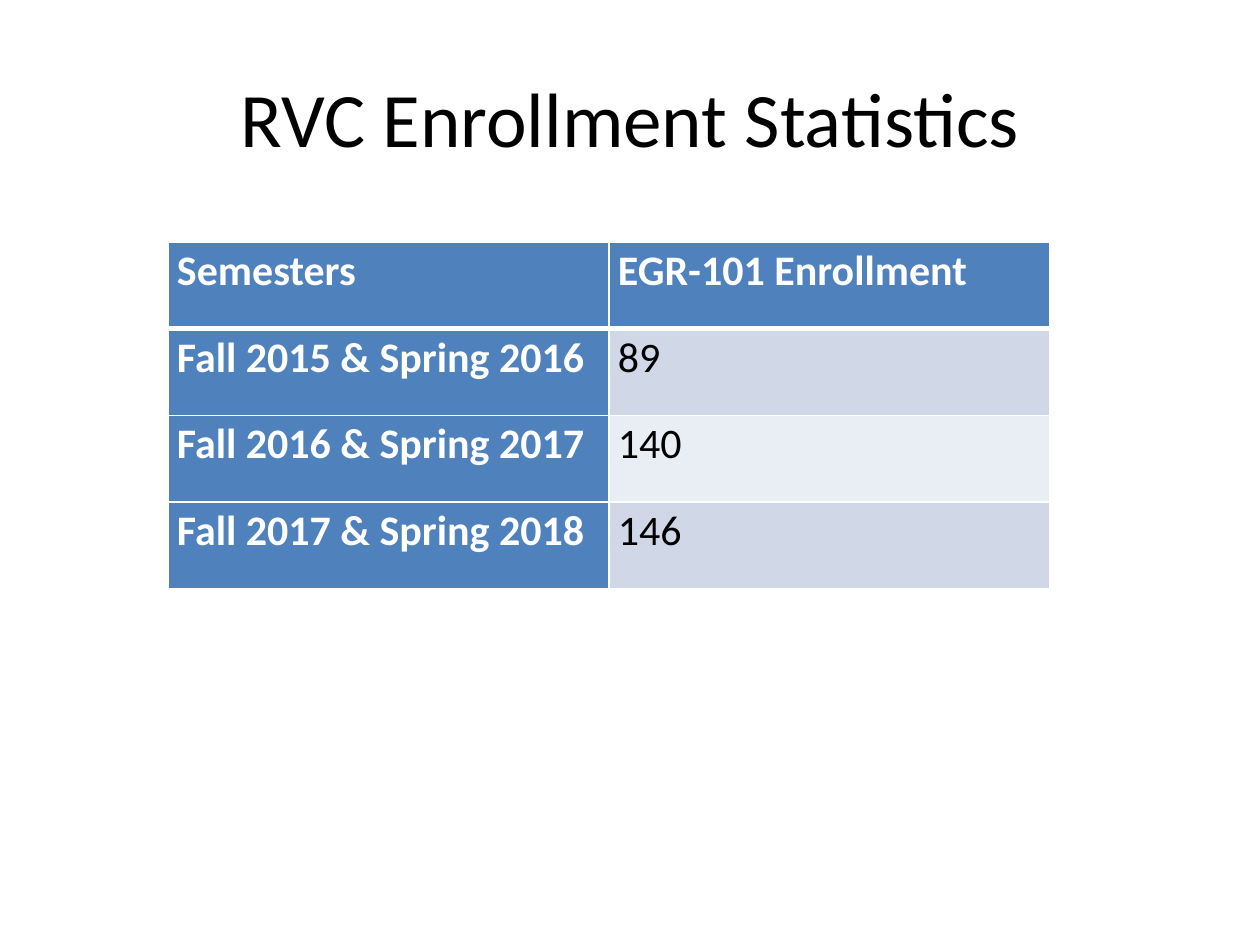
import pptx
import pptx.util
import pptx.dml.color
import pptx.enum.text
import pptx.oxml

PX = 914400 // 126
BLACK = pptx.dml.color.RGBColor(0x00, 0x00, 0x00)
WHITE = pptx.dml.color.RGBColor(0xFF, 0xFF, 0xFF)
HEADING_BLUE = pptx.dml.color.RGBColor(0x4F, 0x81, 0xBD)
BAND_DARK = pptx.dml.color.RGBColor(0xD0, 0xD8, 0xE8)
BAND_LIGHT = pptx.dml.color.RGBColor(0xE9, 0xED, 0xF4)
DRAWING_NS = "http://schemas.openxmlformats.org/drawingml/2006/main"


def add_text(paragraph, text, size, color, bold):
    run = paragraph.add_run()
    run.text = text
    run.font.name = "Calibri"
    run.font.size = pptx.util.Pt(size)
    run.font.bold = bold
    run.font.color.rgb = color


def set_borders(cell, widths):
    properties = cell._tc.get_or_add_tcPr()
    for position, (side, width) in enumerate(widths.items()):
        properties.insert(position, pptx.oxml.parse_xml(
            f'<a:{side} xmlns:a="{DRAWING_NS}" w="{pptx.util.Pt(width)}">'
            f'<a:solidFill><a:srgbClr val="{WHITE}"/></a:solidFill></a:{side}>'))


presentation = pptx.Presentation()
presentation.slide_width = pptx.util.Inches(10)
presentation.slide_height = pptx.util.Inches(7.5)
slide = presentation.slides.add_slide(presentation.slide_layouts[5])

title = slide.shapes.title
title.left, title.top, title.width, title.height = [
    length * PX for length in (63, 38, 1134, 158)]
title.text_frame.vertical_anchor = pptx.enum.text.MSO_ANCHOR.MIDDLE
heading = title.text_frame.paragraphs[0]
heading.alignment = pptx.enum.text.PP_ALIGN.CENTER
add_text(heading, "RVC Enrollment Statistics", 44, BLACK, False)

enrollment_rows = [
    ("Semesters", "EGR-101 Enrollment"),
    ("Fall 2015 & Spring 2016", "89"),
    ("Fall 2016 & Spring 2017", "140"),
    ("Fall 2017 & Spring 2018", "146"),
]
enrollment = slide.shapes.add_table(
    len(enrollment_rows), 2, 168 * PX, 242 * PX, 882 * PX, 347 * PX).table
enrollment.first_col = True

for row, values in enumerate(enrollment_rows):
    for column, value in enumerate(values):
        cell = enrollment.cell(row, column)
        is_heading = row == 0 or column == 0
        cell.margin_left = cell.margin_right = 9 * PX
        cell.margin_top = cell.margin_bottom = 0
        cell.fill.solid()
        if is_heading:
            cell.fill.fore_color.rgb = HEADING_BLUE
        else:
            cell.fill.fore_color.rgb = BAND_DARK if row % 2 else BAND_LIGHT
        set_borders(cell, {"lnL": 1, "lnR": 1,
                           "lnT": 3 if row == 1 else 1,
                           "lnB": 3 if row == 0 else 1})
        paragraph = cell.text_frame.paragraphs[0]
        paragraph.line_spacing = 1.07
        add_text(paragraph, value, 24, WHITE if is_heading else BLACK, is_heading)

presentation.save("out.pptx")
